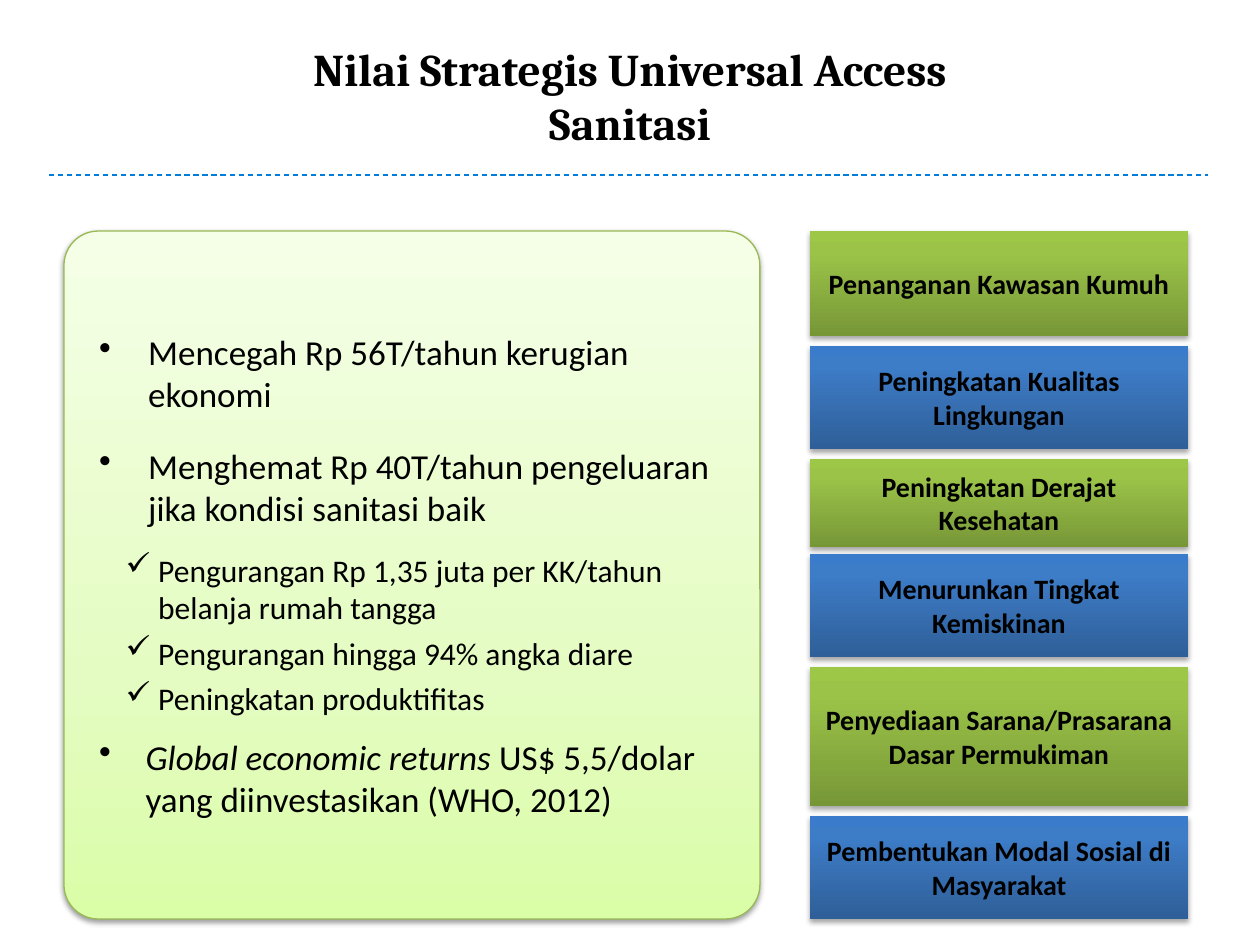
from dataclasses import dataclass
from typing import Any

from lxml import etree
from pptx import Presentation
from pptx import util as u
from pptx.dml.color import RGBColor
from pptx.enum import dml, shapes, text
from pptx.oxml import ns

HEX = {"black": "000000", "rule": "007DDA", "edge": "98B955"}
GRADS = {
    "green": [(0, "779737"), (80, "9BC348"), (100, "9DC746")],
    "blue": [(0, "2F5F99"), (80, "3D7CC7"), (100, "3A7CCB")],
    "pale": [(0, "DAFDA7"), (35, "E4FCC2"), (100, "F5FFE7")],
}


@dataclass
class Goal:
    label: str
    top: int
    high: int


@dataclass
class Point:
    runs: list[tuple[str, bool]]
    size: int = 20
    level: int = 0
    mark: str = "•"
    left: float = 0.49
    hang: float = 0.39
    before: float = 4.2
    after: float = 0


GOALS = [
    Goal("Penanganan Kawasan Kumuh", 231, 105),
    Goal("Peningkatan Kualitas Lingkungan", 346, 103),
    Goal("Peningkatan Derajat Kesehatan", 459, 88),
    Goal("Menurunkan Tingkat Kemiskinan", 554, 103),
    Goal("Penyediaan Sarana/Prasarana Dasar Permukiman", 667, 139),
    Goal("Pembentukan Modal Sosial di Masyarakat", 816, 103),
]
CHECK = {"size": 18, "level": 2, "mark": "✓", "left": 0.57, "hang": 0.26}
POINTS = [
    Point([("Mencegah Rp 56T/tahun kerugian ekonomi", False)],
          before=0, after=4.2),
    Point([("Menghemat Rp 40T/tahun pengeluaran jika kondisi sanitasi baik", False)],
          before=12.7, after=8.4),
    Point([("Pengurangan Rp 1,35 juta per KK/tahun belanja rumah tangga", False)],
          **CHECK),
    Point([("Pengurangan hingga 94% angka diare", False)], **CHECK),
    Point([("Peningkatan produktifitas", False)], **CHECK),
    Point([("Global economic returns", True),
           (" US$ 5,5/dolar yang diinvestasikan (WHO, 2012)", False)],
          level=1, left=0.47, hang=0.37, before=10.6),
]


def px(n: int) -> u.Emu:
    return u.Emu(round(n * 914400 / 126))


def rgb(name: str) -> RGBColor:
    return RGBColor.from_string(HEX[name])


def sub(parent: Any, tag: str, **attrs: Any) -> Any:
    """Append a DrawingML element."""
    return etree.SubElement(parent, ns.qn("a:" + tag),
                            {k: str(v) for k, v in attrs.items()})


def shade(shape: Any, grad: str) -> None:
    """Fill from bottom to top with three colour stops."""
    shape.fill.gradient()
    shape.fill.gradient_angle = 90
    stops = shape.element.spPr.find(".//" + ns.qn("a:gsLst"))
    for old in list(stops):
        stops.remove(old)
    for pos, color in GRADS[grad]:
        sub(sub(stops, "gs", pos=pos * 1000), "srgbClr", val=color)


def drop(shape: Any, alpha: int, dist: float) -> None:
    """Cast a soft shadow straight down."""
    shape.shadow.inherit = False
    effects = shape.element.spPr.find(ns.qn("a:effectLst"))
    cast = sub(effects, "outerShdw", blurRad=u.Pt(3.1), dist=u.Pt(dist),
               dir=5400000, rotWithShape=0)
    sub(sub(cast, "srgbClr", val=HEX["black"]), "alpha", val=alpha * 1000)


def write(para: Any, words: str, *, size: float, face: str = "Calibri",
          bold: bool = False, italic: bool = False) -> None:
    for i, line in enumerate(words.split("\n")):
        if i:
            para.add_line_break()
        run = para.add_run()
        run.text = line
        font = run.font
        font.size, font.name = u.Pt(size), face
        font.bold, font.italic = bold, italic
        font.color.rgb = rgb("black")


def frame(shape: Any) -> Any:
    body = shape.text_frame
    body.word_wrap = True
    body.vertical_anchor = text.MSO_ANCHOR.MIDDLE
    body.paragraphs[0].alignment = text.PP_ALIGN.CENTER
    return body


def draw_head(slide: Any) -> None:
    box = slide.shapes.add_textbox(px(0), px(40), px(1260), px(111))
    write(frame(box).paragraphs[0], "Nilai Strategis Universal Access\nSanitasi",
          size=25.9, face="Cambria", bold=True)
    rule = slide.shapes.add_connector(shapes.MSO_CONNECTOR.STRAIGHT,
                                      px(49), px(175), px(1208), px(175))
    rule.line.color.rgb = rgb("rule")
    rule.line.width = u.Pt(0.75)
    rule.line.dash_style = dml.MSO_LINE.DASH
    sub(rule.element.spPr, "effectLst")


def draw_goal(slide: Any, goal: Goal, grad: str) -> None:
    box = slide.shapes.add_shape(shapes.MSO_SHAPE.RECTANGLE, px(810),
                                 px(goal.top), px(378), px(goal.high))
    shade(box, grad)
    box.line.fill.background()
    drop(box, 35, 1.8)
    write(frame(box).paragraphs[0], goal.label, size=16, bold=True)


def draw_point(para: Any, point: Point) -> None:
    para.alignment = text.PP_ALIGN.LEFT
    para.level = point.level
    para.space_before = u.Pt(point.before)
    para.space_after = u.Pt(point.after)
    props = para._p.get_or_add_pPr()
    props.set("marL", str(u.Inches(point.left)))
    props.set("indent", str(-u.Inches(point.hang)))
    sub(props, "buChar", char=point.mark)
    for words, italic in point.runs:
        write(para, words, size=point.size, italic=italic)


def draw_panel(slide: Any) -> None:
    panel = slide.shapes.add_shape(shapes.MSO_SHAPE.ROUNDED_RECTANGLE,
                                   px(64), px(231), px(696), px(688))
    panel.adjustments[0] = 0.05
    shade(panel, "pale")
    panel.line.color.rgb = rgb("edge")
    panel.line.width = u.Pt(0.75)
    drop(panel, 38, 1.6)
    body = frame(panel)
    for i, point in enumerate(POINTS):
        draw_point(body.add_paragraph() if i else body.paragraphs[0], point)


def main() -> None:
    deck = Presentation()
    deck.slide_width, deck.slide_height = px(1260), px(945)
    slide = deck.slides.add_slide(deck.slide_layouts[6])
    draw_head(slide)
    draw_panel(slide)
    for i, goal in enumerate(GOALS):
        draw_goal(slide, goal, ("green", "blue")[i % 2])
    deck.save("out.pptx")


if __name__ == "__main__":
    main()
